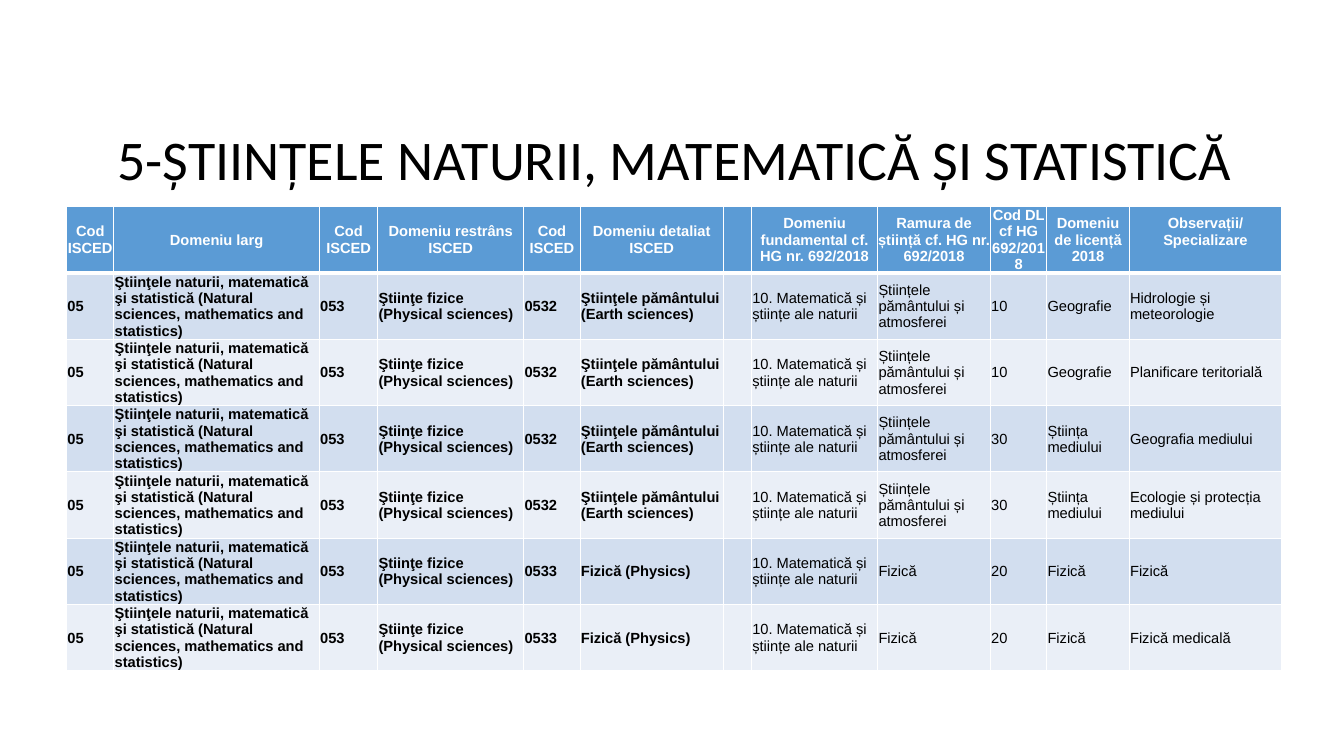
"""Build the slide that maps ISCED field 5 to Romanian study domains."""
from typing import NamedTuple

import lxml.etree
import pptx
import pptx.dml.color
import pptx.enum.text
import pptx.oxml.ns
import pptx.presentation
import pptx.slide
import pptx.table
import pptx.util

BLACK = pptx.dml.color.RGBColor(0x00, 0x00, 0x00)
WHITE = pptx.dml.color.RGBColor(0xFF, 0xFF, 0xFF)
HEADER_BLUE = pptx.dml.color.RGBColor(0x5B, 0x9B, 0xD5)
BAND_DARK = pptx.dml.color.RGBColor(0xD2, 0xDE, 0xEF)
BAND_LIGHT = pptx.dml.color.RGBColor(0xEA, 0xEF, 0xF7)

ROW_HEIGHT = 1.67
THIN_BORDER = 1
THICK_BORDER = 3


class Column(NamedTuple):
    """A table column: heading, width in cm, body weight and heading bottom inset in cm."""

    heading: str
    width: float
    bold: bool = False
    heading_inset: float = 0


class Specialization(NamedTuple):
    """The values that vary from one table row to the next."""

    isced_code: str
    isced_field: str
    science_branch: str
    licence_code: str
    licence_domain: str
    name: str

    def cells(self) -> list[str]:
        """Return the full row, including the values shared by all rows."""
        return [
            "05",
            "Ştiinţele naturii, matematică şi statistică (Natural sciences, mathematics and statistics)",
            "053",
            "Ştiinţe fizice (Physical sciences)",
            self.isced_code,
            self.isced_field,
            "",
            "10. Matematică și științe ale naturii",
            self.science_branch,
            self.licence_code,
            self.licence_domain,
            self.name,
        ]


class CellStyle(NamedTuple):
    """The look of a table cell; insets are in cm and borders in points."""

    fill: pptx.dml.color.RGBColor
    color: pptx.dml.color.RGBColor
    bold: bool
    alignment: pptx.enum.text.PP_ALIGN
    inset: float
    bottom_inset: float
    top_border: int
    bottom_border: int


COLUMNS = [
    Column("Cod ISCED", 1.19, True),
    Column("Domeniu larg", 5.18, True),
    Column("Cod ISCED", 1.47, True),
    Column("Domeniu restrâns ISCED", 3.68, True),
    Column("Cod ISCED", 1.42, True),
    Column("Domeniu detaliat ISCED", 3.61, True),
    Column("", 0.71),
    Column("Domeniu fundamental cf. HG nr. 692/2018", 3.18),
    Column("Ramura de știință cf. HG nr. 692/2018", 2.84),
    Column("Cod DL cf HG 692/2018", 1.42),
    Column("Domeniu de licență 2018", 2.08),
    Column("Observații/ Specializare", 3.84, heading_inset=0.41),
]

EARTH = ("0532", "Ştiinţele pământului (Earth sciences)", "Științele pământului și atmosferei")
PHYSICS = ("0533", "Fizică (Physics)", "Fizică")
SPECIALIZATIONS = [
    Specialization(*EARTH, "10", "Geografie", "Hidrologie și meteorologie"),
    Specialization(*EARTH, "10", "Geografie", "Planificare teritorială"),
    Specialization(*EARTH, "30", "Știința mediului", "Geografia mediului"),
    Specialization(*EARTH, "30", "Știința mediului", "Ecologie și protecția mediului"),
    Specialization(*PHYSICS, "20", "Fizică", "Fizică"),
    Specialization(*PHYSICS, "20", "Fizică", "Fizică medicală"),
]


def set_borders(cell: pptx.table._Cell, top: int, bottom: int) -> None:
    """Draw white borders around a cell."""
    properties = cell._tc.get_or_add_tcPr()
    widths = {"a:lnL": THIN_BORDER, "a:lnR": THIN_BORDER, "a:lnT": top, "a:lnB": bottom}
    for position, (tag, width) in enumerate(widths.items()):
        line = lxml.etree.Element(pptx.oxml.ns.qn(tag), w=str(pptx.util.Pt(width)))
        fill = lxml.etree.SubElement(line, pptx.oxml.ns.qn("a:solidFill"))
        lxml.etree.SubElement(fill, pptx.oxml.ns.qn("a:srgbClr"), val=str(WHITE))
        properties.insert(position, line)


def fill_cell(cell: pptx.table._Cell, text: str, style: CellStyle) -> None:
    """Write text into a cell and format it."""
    cell.fill.solid()
    cell.fill.fore_color.rgb = style.fill
    cell.vertical_anchor = pptx.enum.text.MSO_ANCHOR.MIDDLE
    cell.margin_left = cell.margin_right = cell.margin_top = pptx.util.Cm(style.inset)
    cell.margin_bottom = pptx.util.Cm(style.bottom_inset)
    cell.text_frame.text = text
    paragraph = cell.text_frame.paragraphs[0]
    paragraph.alignment = style.alignment
    paragraph.font.size = pptx.util.Pt(10.5)
    for run in paragraph.runs:
        run.font.name = "Arial"
        run.font.size = pptx.util.Pt(10.5)
        run.font.bold = style.bold
        run.font.color.rgb = style.color
    set_borders(cell, style.top_border, style.bottom_border)


def add_title(slide: pptx.slide.Slide) -> None:
    """Place and format the slide title."""
    title = slide.shapes.title
    title.left, title.top = pptx.util.Cm(2.39), pptx.util.Cm(3.18)
    title.width, title.height = pptx.util.Cm(29.21), pptx.util.Cm(1.83)
    text_frame = title.text_frame
    text_frame.text = "5-ȘTIINȚELE NATURII, MATEMATICĂ ȘI STATISTICĂ"
    text_frame.word_wrap = True
    text_frame.auto_size = pptx.enum.text.MSO_AUTO_SIZE.NONE
    text_frame.vertical_anchor = pptx.enum.text.MSO_ANCHOR.MIDDLE
    paragraph = text_frame.paragraphs[0]
    paragraph.alignment = pptx.enum.text.PP_ALIGN.CENTER
    paragraph.line_spacing = 0.9
    font = paragraph.runs[0].font
    font.name = "Calibri"
    font.size = pptx.util.Pt(40)
    font.color.rgb = BLACK


def add_domain_table(slide: pptx.slide.Slide) -> None:
    """Add the table of domains and specializations."""
    row_count = len(SPECIALIZATIONS) + 1
    table = slide.shapes.add_table(
        row_count,
        len(COLUMNS),
        pptx.util.Cm(1.68),
        pptx.util.Cm(5.21),
        pptx.util.Cm(sum(column.width for column in COLUMNS)),
        pptx.util.Cm(ROW_HEIGHT * row_count),
    ).table
    for row in table.rows:
        row.height = pptx.util.Cm(ROW_HEIGHT)
    for index, column in enumerate(COLUMNS):
        table.columns[index].width = pptx.util.Cm(column.width)
        heading_style = CellStyle(
            HEADER_BLUE, WHITE, True, pptx.enum.text.PP_ALIGN.CENTER,
            0, column.heading_inset, THIN_BORDER, THICK_BORDER,
        )
        fill_cell(table.cell(0, index), column.heading, heading_style)
        for row_index, specialization in enumerate(SPECIALIZATIONS, start=1):
            body_style = CellStyle(
                BAND_DARK if row_index % 2 else BAND_LIGHT, BLACK, column.bold,
                pptx.enum.text.PP_ALIGN.LEFT, 0.02, 0,
                THICK_BORDER if row_index == 1 else THIN_BORDER, THIN_BORDER,
            )
            fill_cell(table.cell(row_index, index), specialization.cells()[index], body_style)


def main() -> None:
    """Create the presentation and save it."""
    presentation = pptx.Presentation()
    presentation.slide_width = pptx.util.Cm(33.87)
    presentation.slide_height = pptx.util.Cm(19.05)
    slide = presentation.slides.add_slide(presentation.slide_layouts[5])
    add_title(slide)
    add_domain_table(slide)
    presentation.save("out.pptx")


if __name__ == "__main__":
    main()
